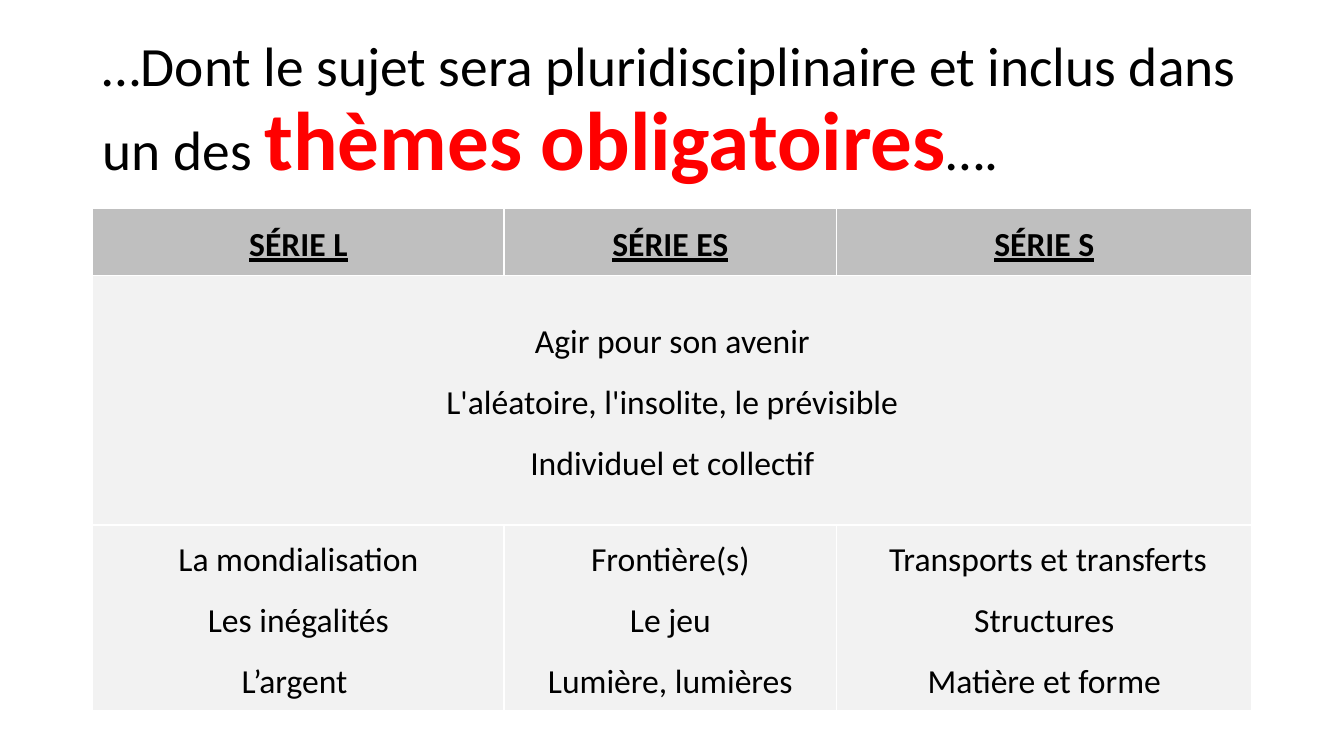
import dataclasses

import pptx
import pptx.dml.color
import pptx.enum.text
import pptx.oxml
import pptx.oxml.ns
import pptx.util

Pt = pptx.util.Pt
Color = pptx.dml.color.RGBColor.from_string
Align = pptx.enum.text.PP_ALIGN
Anchor = pptx.enum.text.MSO_ANCHOR


@dataclasses.dataclass(frozen=True)
class Theme:
    face: str = "Calibri"
    ink: str = "000000"
    red: str = "FF0000"
    head: str = "BFBFBF"
    pale: str = "F2F2F2"
    rule: str = "FFFFFF"
    title: float = 39.6
    large: float = 59.4
    body: float = 24


THEME = Theme()
LEFT, WIDTH = 66.24, 828
COLS = [293.8, 237.6, 296.6]
ROWS = [48, 178, 132.5]
SERIES = ["SÉRIE L", "SÉRIE ES", "SÉRIE S"]
COMMON = ["Agir pour son avenir", "L'aléatoire, l'insolite, le prévisible", "Individuel et collectif"]
TOPICS = [
    ["La mondialisation", "Les inégalités", "L’argent "],
    ["Frontière(s)", "Le jeu", "Lumière, lumières"],
    [" Transports et transferts", "Structures", "Matière et forme"],
]


def style(font, size, color, bold=False):
    font.name = THEME.face
    font.size = Pt(size)
    font.color.rgb = Color(color)
    font.bold = bold


def add_title(slide, parts):
    frame = slide.shapes.add_textbox(Pt(LEFT), Pt(28.8), Pt(WIDTH), Pt(104.4)).text_frame
    frame.word_wrap = True
    frame.vertical_anchor = Anchor.MIDDLE
    para = frame.paragraphs[0]
    para.line_spacing = 0.9
    for text, size, color, bold in parts:
        run = para.add_run()
        run.text = text
        style(run.font, size, color, bold)


def add_rules(cell):
    props = cell._tc.get_or_add_tcPr()
    space = pptx.oxml.ns.nsdecls("a")
    for spot, side in enumerate("LRTB"):
        line = pptx.oxml.parse_xml(
            f'<a:ln{side} {space} w="{Pt(1)}"><a:solidFill>'
            f'<a:srgbClr val="{THEME.rule}"/></a:solidFill></a:ln{side}>'
        )
        props.insert(spot, line)


def fill_cell(cell, lines, head=False):
    cell.margin_left = cell.margin_right = Pt(8.5)
    cell.margin_top = cell.margin_bottom = 0
    cell.vertical_anchor = Anchor.MIDDLE
    cell.text = "\n".join(lines)
    for para in cell.text_frame.paragraphs:
        para.alignment = Align.CENTER
        para.line_spacing = 1.15
        para.space_before = Pt(2 if head else 0)
        para.space_after = Pt(2 if head else 10)
        style(para.font, THEME.body, THEME.ink, head)
        para.font.underline = head


def add_grid(slide):
    frame = slide.shapes.add_table(
        len(ROWS), len(COLS), Pt(LEFT), Pt(149), Pt(WIDTH), Pt(sum(ROWS))
    )
    table = frame.table
    table.first_row = table.horz_banding = False
    for col, width in zip(table.columns, COLS):
        col.width = Pt(width)
    for index, (row, height) in enumerate(zip(table.rows, ROWS)):
        row.height = Pt(height)
        for cell in row.cells:
            cell.fill.solid()
            cell.fill.fore_color.rgb = Color(THEME.pale if index else THEME.head)
            add_rules(cell)
    table.cell(1, 0).merge(table.cell(1, 2))
    fill_cell(table.cell(1, 0), COMMON)
    for col, (name, topics) in enumerate(zip(SERIES, TOPICS)):
        fill_cell(table.cell(0, col), [name], head=True)
        fill_cell(table.cell(2, col), topics)


def main():
    deck = pptx.Presentation()
    deck.slide_width, deck.slide_height = Pt(960), Pt(540)
    slide = deck.slides.add_slide(deck.slide_layouts[6])
    add_title(slide, [
        ("…Dont le sujet sera pluridisciplinaire et inclus dans un des ", THEME.title, THEME.ink, False),
        ("thèmes obligatoires", THEME.large, THEME.red, True),
        ("….", THEME.title, THEME.ink, False),
    ])
    add_grid(slide)
    deck.save("out.pptx")


if __name__ == "__main__":
    main()
